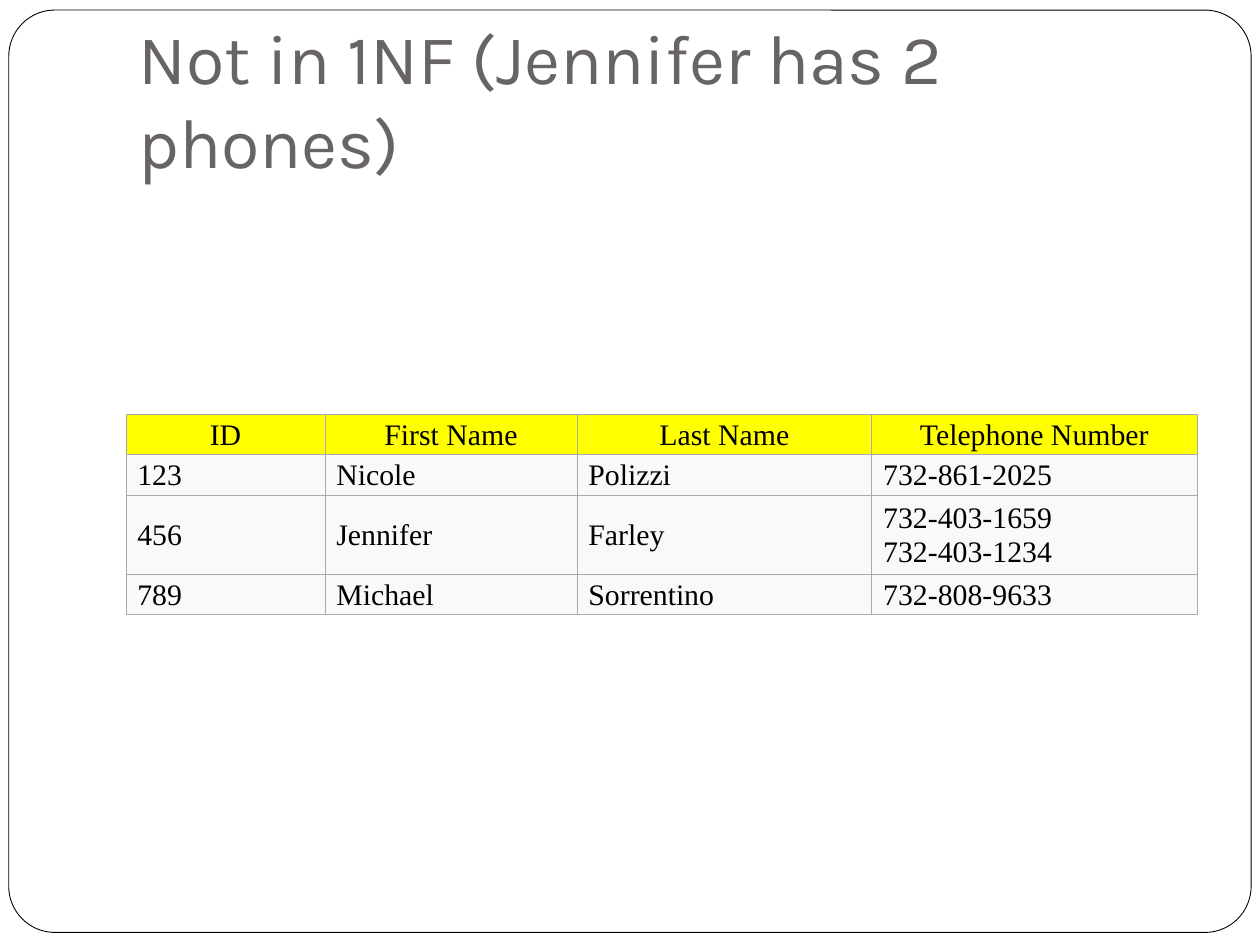
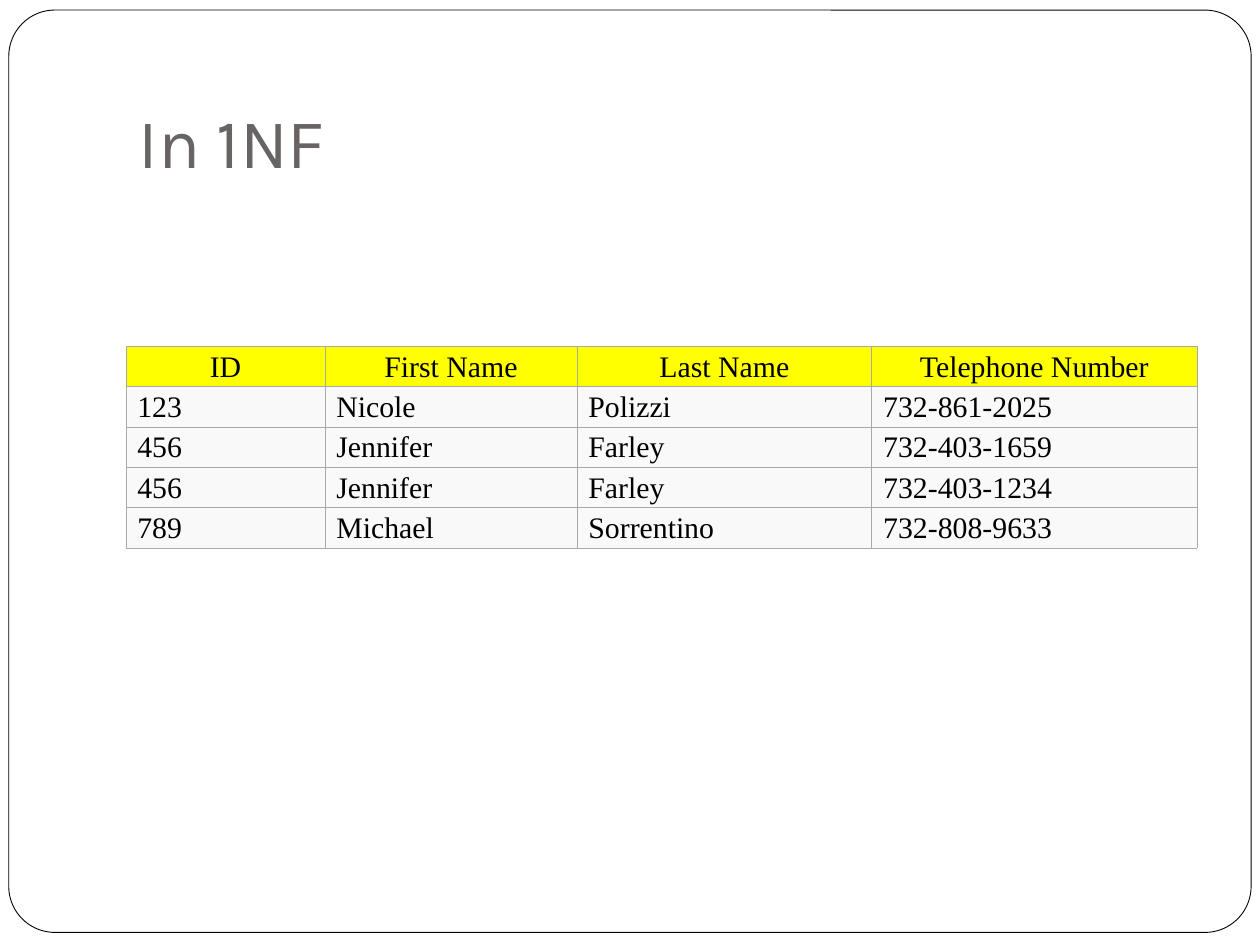
from lxml import etree
from pptx import Presentation
from pptx.dml.color import RGBColor
from pptx.enum.shapes import MSO_SHAPE
from pptx.enum.text import MSO_ANCHOR, MSO_AUTO_SIZE, PP_ALIGN
from pptx.oxml.ns import qn
from pptx.util import Inches, Pt

HEADERS = ("ID", "First Name", "Last Name", "Telephone Number")
SLIDES = [
    {
        "title": "Not in 1NF (Jennifer has 2 phones)",
        "table_top": 3.29,
        "people": [
            ("123", "Nicole", "Polizzi", "732-861-2025"),
            ("456", "Jennifer", "Farley", "732-403-1659\n732-403-1234"),
            ("789", "Michael", "Sorrentino", "732-808-9633"),
        ],
    },
    {
        "title": "In 1NF",
        "table_top": 2.75,
        "people": [
            ("123", "Nicole", "Polizzi", "732-861-2025"),
            ("456", "Jennifer", "Farley", "732-403-1659"),
            ("456", "Jennifer", "Farley", "732-403-1234"),
            ("789", "Michael", "Sorrentino", "732-808-9633"),
        ],
    },
]

WHITE = RGBColor(0xFF, 0xFF, 0xFF)
BLACK = RGBColor(0x00, 0x00, 0x00)
TITLE_GREY = RGBColor(0x69, 0x64, 0x64)
BORDER_GREY = RGBColor(0xAA, 0xAA, 0xAA)
HEADER_YELLOW = RGBColor(0xFF, 0xFF, 0x00)
BODY_GREY = RGBColor(0xF9, 0xF9, 0xF9)

LEFT, CENTER = PP_ALIGN.LEFT, PP_ALIGN.CENTER
MIDDLE, BOTTOM = MSO_ANCHOR.MIDDLE, MSO_ANCHOR.BOTTOM

TITLE_LAYOUT = 5
CONTENT_LEFT, CONTENT_WIDTH = 1, 8.5
COLUMN_WIDTHS = (1.58, 2, 2.34, 2.58)
LINE_ROW, DOUBLE_ROW = 0.32, 0.63
HAIRLINE = Pt(0.5)


def write(frame, text, *, font, size, color, align=LEFT):
    frame.text = text
    for paragraph in frame.paragraphs:
        paragraph.alignment = align
        for run in paragraph.runs:
            run.font.name = font
            run.font.size = Pt(size)
            run.font.bold = False
            run.font.color.rgb = color


def add_frame(slide):
    """Draw the rounded page frame once and place it behind the layout's content."""
    frame = slide.shapes.add_shape(
        MSO_SHAPE.ROUNDED_RECTANGLE,
        Inches(0.07), Inches(0.08), Inches(9.86), Inches(7.32))
    frame.adjustments[0] = 0.05
    frame.shadow.inherit = False
    frame.fill.solid()
    frame.fill.fore_color.rgb = WHITE
    frame.line.color.rgb = BLACK
    frame.line.width = HAIRLINE
    slide.slide_layout.shapes.element.insert(2, frame.element)


def add_title(slide, text):
    title = slide.shapes.title
    title.left, title.top = Inches(CONTENT_LEFT), Inches(0.3)
    title.width, title.height = Inches(CONTENT_WIDTH), Inches(1.25)
    frame = title.text_frame
    frame.auto_size = MSO_AUTO_SIZE.NONE
    frame.word_wrap = True
    frame.vertical_anchor = BOTTOM
    frame.margin_left = frame.margin_right = frame.margin_bottom = Inches(0.1)
    frame.margin_top = Inches(0.05)
    write(frame, text, font="Karla", size=40, color=TITLE_GREY)


def add_borders(cell):
    properties = cell._tc.get_or_add_tcPr()
    for side in ("a:lnL", "a:lnR", "a:lnT", "a:lnB"):
        line = etree.SubElement(properties, qn(side), w=str(int(HAIRLINE)))
        fill = etree.SubElement(line, qn("a:solidFill"))
        etree.SubElement(fill, qn("a:srgbClr"), val=str(BORDER_GREY))


def format_cell(cell, text, is_header):
    add_borders(cell)
    cell.fill.solid()
    cell.fill.fore_color.rgb = HEADER_YELLOW if is_header else BODY_GREY
    cell.vertical_anchor = MIDDLE
    cell.margin_left = Inches(0.01 if is_header else 0.09)
    cell.margin_top = cell.margin_right = Inches(0.01)
    cell.margin_bottom = 0
    write(cell.text_frame, text, font="Times New Roman", size=17, color=BLACK,
          align=CENTER if is_header else LEFT)


def add_people_table(slide, people, top):
    rows = [HEADERS, *people]
    heights = [DOUBLE_ROW if any("\n" in text for text in row) else LINE_ROW
               for row in rows]
    table = slide.shapes.add_table(
        len(rows), len(HEADERS), Inches(CONTENT_LEFT), Inches(top),
        Inches(CONTENT_WIDTH), Inches(sum(heights))).table
    table.first_row = table.horz_banding = False
    for column, width in zip(table.columns, COLUMN_WIDTHS):
        column.width = Inches(width)
    for r, (row, height) in enumerate(zip(rows, heights)):
        table.rows[r].height = Inches(height)
        for c, text in enumerate(row):
            format_cell(table.cell(r, c), text, is_header=r == 0)


def main():
    deck = Presentation()
    deck.slide_width, deck.slide_height = Inches(10), Inches(7.5)
    layout = deck.slide_layouts[TITLE_LAYOUT]
    for number, content in enumerate(SLIDES):
        slide = deck.slides.add_slide(layout)
        if number == 0:
            add_frame(slide)
        add_title(slide, content["title"])
        add_people_table(slide, content["people"], content["table_top"])
    deck.save("out.pptx")


if __name__ == "__main__":
    main()
